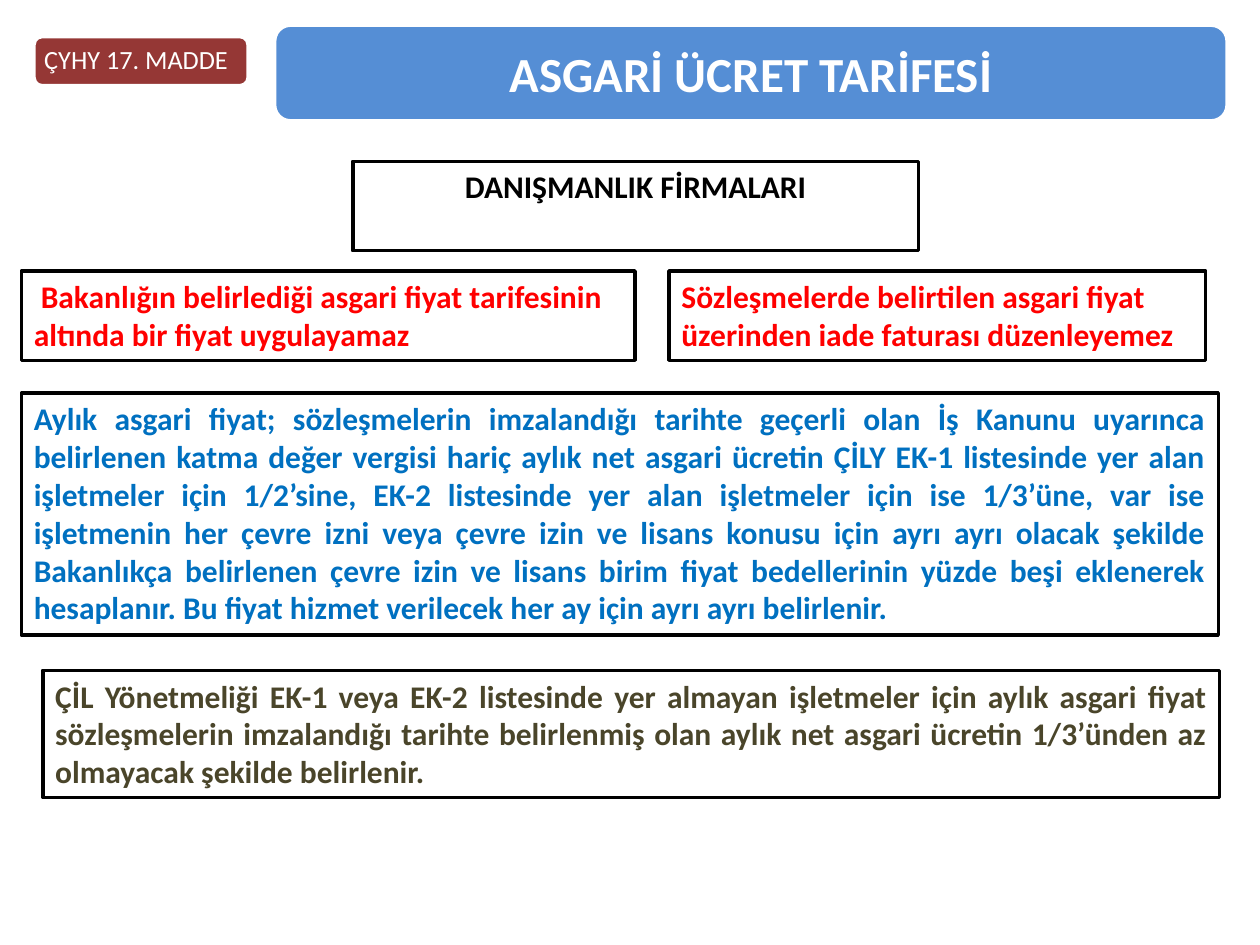
from pptx import Presentation
from pptx.dml.color import RGBColor
from pptx.enum.shapes import MSO_SHAPE as Shape
from pptx.enum.text import MSO_ANCHOR as Anchor, PP_ALIGN as Align
from pptx.util import Pt

COLORS = {
    "white": "FFFFFF", "black": "000000", "maroon": "953735", "banner": "558ED5",
    "red": "FF0000", "blue": "0070C0", "olive": "4A452A",
}
LEFT_EDGE = 12.24
PAIR_TOP, PAIR_HEIGHT = 154.8, 51.12

# text, (left, top, width, height), colour, alignment, first-line indent
RULES = [
    ("DANIŞMANLIK FİRMALARI", (201.6, 92.16, 323.28, 51.12), "black", Align.CENTER, 0),
    ("Bakanlığın belirlediği asgari fiyat tarifesinin altında bir fiyat uygulayamaz",
     (LEFT_EDGE, PAIR_TOP, 350.64, PAIR_HEIGHT), "red", Align.LEFT, 4),
    ("Sözleşmelerde belirtilen asgari fiyat üzerinden iade faturası düzenleyemez",
     (382.32, PAIR_TOP, 306.72, PAIR_HEIGHT), "red", Align.LEFT, 0),
    ("Aylık asgari fiyat; sözleşmelerin imzalandığı tarihte geçerli olan İş Kanunu "
     "uyarınca belirlenen katma değer vergisi hariç aylık net asgari ücretin ÇİLY EK-1 "
     "listesinde yer alan işletmeler için 1/2’sine, EK-2 listesinde yer alan işletmeler "
     "için ise 1/3’üne, var ise işletmenin her çevre izni veya çevre izin ve lisans "
     "konusu için ayrı ayrı olacak şekilde Bakanlıkça belirlenen çevre izin ve lisans "
     "birim fiyat bedellerinin yüzde beşi eklenerek hesaplanır. Bu fiyat hizmet "
     "verilecek her ay için ayrı ayrı belirlenir.",
     (LEFT_EDGE, 224.64, 684, 138.24), "blue", Align.JUSTIFY, 0),
    ("ÇİL Yönetmeliği EK-1 veya EK-2 listesinde yer almayan işletmeler için aylık asgari "
     "fiyat sözleşmelerin imzalandığı tarihte belirlenmiş olan aylık net asgari ücretin "
     "1/3’ünden az olmayacak şekilde belirlenir.",
     (24.48, 383.04, 672.48, 72.72), "olive", Align.JUSTIFY, 0),
]


def color(name):
    return RGBColor.from_string(COLORS[name])


def add_panel(page, kind, box, fill, line):
    panel = page.shapes.add_shape(kind, *map(Pt, box))
    panel.shadow.inherit = False
    panel.fill.solid()
    panel.fill.fore_color.rgb = color(fill)
    panel.line.color.rgb = color(line)
    panel.line.width = Pt(2)
    return panel


def write(shape, text, size, ink, align, bold=True, anchor=Anchor.MIDDLE, inset=None):
    """Fill the shape with one formatted paragraph and return it."""
    frame = shape.text_frame
    frame.word_wrap = True
    frame.vertical_anchor = anchor
    if inset is not None:
        frame.margin_left = frame.margin_right = Pt(inset)
        frame.margin_top = frame.margin_bottom = Pt(inset)
    para = frame.paragraphs[0]
    para.text = text
    para.alignment = align
    para.font.name = "Calibri"
    para.font.size = Pt(size)
    para.font.bold = bold
    para.font.color.rgb = color(ink)
    return para


def add_article_tag(page, box):
    tag = add_panel(page, Shape.ROUNDED_RECTANGLE, box, "maroon", "white")
    para = write(tag, "ÇYHY 17. MADDE", 15, "white", Align.LEFT, bold=False, inset=4.5)
    para.line_spacing = 0.9


def add_title_banner(page, box):
    """Lay the title placeholder over a rounded banner."""
    banner = add_panel(page, Shape.ROUNDED_RECTANGLE, box, "banner", "white")
    title = page.shapes.title
    banner.element.addnext(title.element)
    title.left, title.top, title.width, title.height = map(Pt, box)
    write(title, "ASGARİ ÜCRET TARİFESİ", 28, "white", Align.CENTER, inset=8.5)


def add_rule_box(page, text, box, ink, align, indent):
    panel = add_panel(page, Shape.RECTANGLE, box, "white", "black")
    para = write(panel, text, 18, ink, align, anchor=Anchor.TOP)
    if indent:
        para._p.get_or_add_pPr().set("indent", str(Pt(indent)))


def main():
    deck = Presentation()
    deck.slide_width, deck.slide_height = Pt(720), Pt(540)
    page = deck.slides.add_slide(deck.slide_layouts[5])
    add_article_tag(page, (19.44, 20.88, 122.4, 28.08))
    add_title_banner(page, (156.96, 14.4, 544.32, 54.72))
    for rule in RULES:
        add_rule_box(page, *rule)
    deck.save("out.pptx")


if __name__ == "__main__":
    main()
